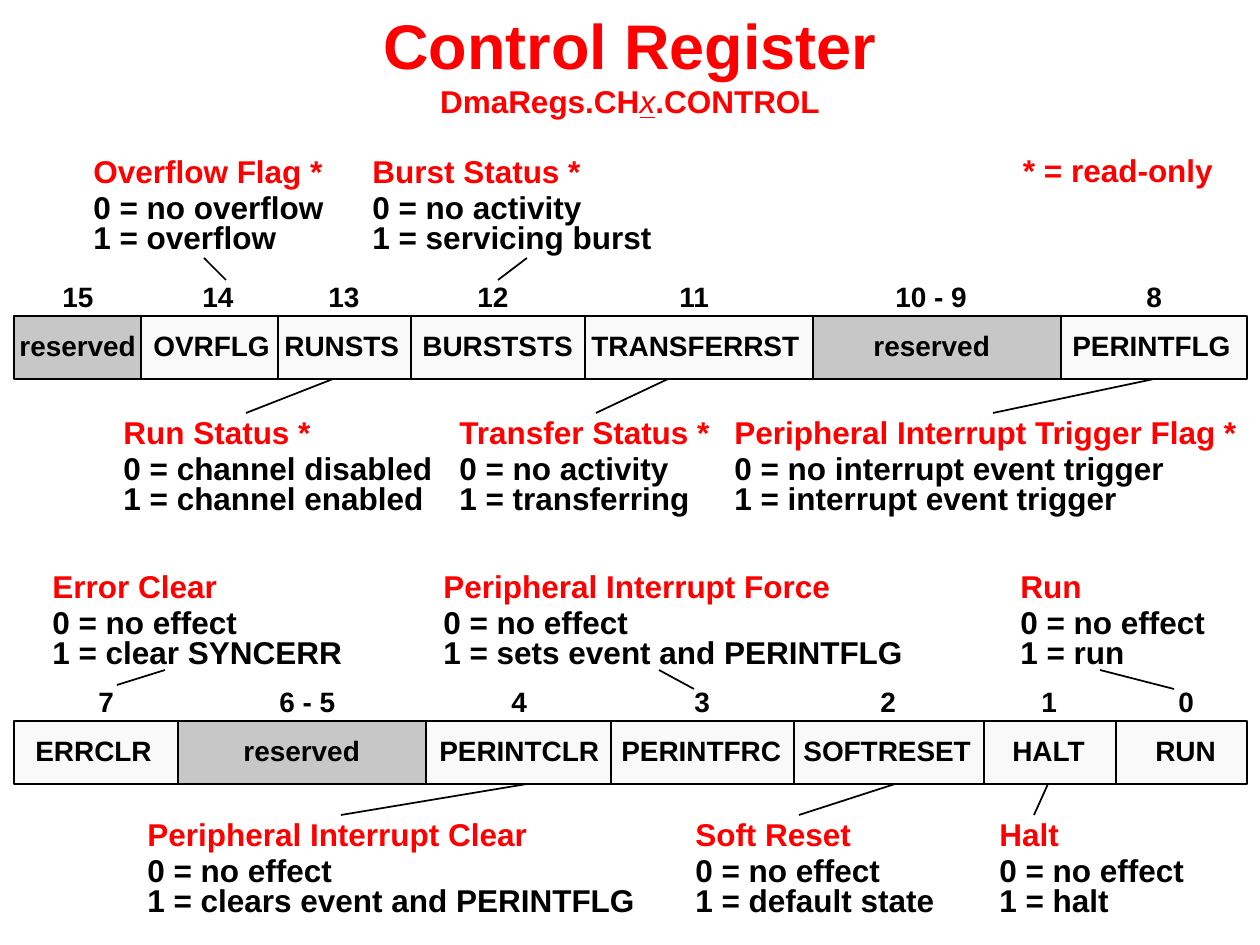
import pptx
import pptx.util
import pptx.dml.color
import pptx.enum.shapes
import pptx.enum.text
import pptx.oxml.ns
from dataclasses import dataclass
from lxml import etree

RGB = pptx.dml.color.RGBColor.from_string
ALIGN = pptx.enum.text.PP_ALIGN
ANCHOR = pptx.enum.text.MSO_ANCHOR
SCALE = 914400 / 126


def px(n):
    return pptx.util.Emu(round(n * SCALE))


@dataclass(frozen=True)
class Theme:
    font: str = "Arial"
    accent: str = "FF0000"
    ink: str = "000000"
    field: str = "F9F9F9"
    reserved: str = "C7C7C7"
    title: int = 36
    note: int = 18
    cell: int = 16
    line: int = 1
    leading: float = 0.8
    gap: float = 3.6


class Deck:
    def __init__(self, theme):
        self.t = theme
        self.prs = pptx.Presentation()
        self.prs.slide_width, self.prs.slide_height = px(1260), px(945)
        self.s = self.prs.slides.add_slide(self.prs.slide_layouts[6])

    def run(self, p, text, size, color, **extra):
        r = p.add_run()
        r.text = text
        fmt = {"name": self.t.font, "size": pptx.util.Pt(size), "bold": True, **extra}
        for key, value in fmt.items():
            setattr(r.font, key, value)
        r.font.color.rgb = RGB(color)

    def frame(self, x, y, w, h, **fmt):
        tf = self.s.shapes.add_textbox(px(x), px(y), px(w), px(h)).text_frame
        for key, value in fmt.items():
            setattr(tf, key, value)
        return tf

    def title(self, heading, parts):
        tf = self.frame(0, 0, 1260, 127, word_wrap=True, vertical_anchor=ANCHOR.MIDDLE)
        p = tf.paragraphs[0]
        p.alignment = ALIGN.CENTER
        self.run(p, heading, self.t.title, self.t.accent)
        p.add_line_break()
        for text, extra in parts:
            self.run(p, text, self.t.note, self.t.accent, **extra)

    def text(self, x, y, w, h, lines, size, align=ALIGN.LEFT, anchor=ANCHOR.TOP):
        tf = self.frame(x, y, w, h, word_wrap=False, vertical_anchor=anchor,
                        auto_size=pptx.enum.text.MSO_AUTO_SIZE.SHAPE_TO_FIT_TEXT)
        for i, (line, color) in enumerate(lines):
            p = tf.add_paragraph() if i else tf.paragraphs[0]
            p.alignment, p.line_spacing = align, self.t.leading
            if len(lines) > 1:
                p.space_after = pptx.util.Pt(0 if i else self.t.gap)
            self.run(p, line, size, color)

    def note(self, x, y, w, heading, *values):
        lines = [(heading, self.t.accent)] + [(v, self.t.ink) for v in values]
        self.text(x, y, w, 111, lines, self.t.note, anchor=ANCHOR.MIDDLE)

    def rect(self, x, y, w, h, fill):
        sp = self.s.shapes.add_shape(pptx.enum.shapes.MSO_SHAPE.RECTANGLE,
                                     px(x), px(y), px(w), px(h))
        sp.shadow.inherit = False
        sp.fill.solid()
        sp.fill.fore_color.rgb = RGB(fill)
        sp.line.color.rgb = RGB(self.t.ink)
        sp.line.width = pptx.util.Pt(self.t.line)
        return sp

    def line(self, x1, y1, x2, y2):
        c = self.s.shapes.add_connector(pptx.enum.shapes.MSO_CONNECTOR.STRAIGHT,
                                        px(x1), px(y1), px(x2), px(y2))
        c.line.color.rgb = RGB(self.t.ink)
        c.line.width = pptx.util.Pt(self.t.line)
        etree.SubElement(c._element.spPr, pptx.oxml.ns.qn("a:effectLst"))
        return c

    def register(self, y, spans, dividers, fields):
        h = 63
        rects = [self.rect(a, y, b - a, h, fill) for a, b, fill in spans]
        for x in dividers:
            self.line(x, y, x, y + h)
        for bit, bit_x, bit_w, name, name_x, name_w in fields:
            self.text(bit_x, y - 36, bit_w, 39, [(bit, self.t.ink)], self.t.cell)
            self.text(name_x, y + 13, name_w, 39, [(name, self.t.ink)], self.t.cell)
        return rects


HIGH_FIELDS = [
    ("15", 50, 59, "reserved", 7, 145),
    ("14", 190, 59, "OVRFLG", 141, 145),
    ("13", 316, 59, "RUNSTS", 272, 144),
    ("12", 465, 59, "BURSTSTS", 410, 180),
    ("11", 667, 59, "TRANSFERRST", 579, 236),
    ("10 - 9", 883, 100, "reserved", 861, 145),
    ("8", 1134, 42, "PERINTFLG", 1060, 188),
]
LOW_FIELDS = [
    ("7", 86, 42, "ERRCLR", 23, 146),
    ("6 - 5", 267, 84, "reserved", 231, 145),
    ("4", 499, 42, "PERINTCLR", 427, 188),
    ("3", 682, 42, "PERINTFRC", 609, 188),
    ("2", 868, 42, "SOFTRESET", 791, 196),
    ("1", 1029, 42, "HALT", 1000, 103),
    ("0", 1166, 42, "RUN", 1143, 89),
]
NOTES = [
    (81, 152, 258, "Overflow Flag *", "0 = no overflow", "1 = overflow"),
    (360, 152, 307, "Burst Status *", "0 = no activity", "1 = servicing burst"),
    (111, 413, 336, "Run Status *", "0 = channel disabled", "1 = channel enabled"),
    (447, 413, 279, "Transfer Status *", "0 = no activity", "1 = transferring"),
    (722, 413, 531, "Peripheral Interrupt Trigger Flag *",
     "0 = no interrupt event trigger", "1 = interrupt event trigger"),
    (40, 567, 317, "Error Clear", "0 = no effect", "1 = clear SYNCERR"),
    (431, 567, 487, "Peripheral Interrupt Force", "0 = no effect",
     "1 = sets event and PERINTFLG"),
    (1008, 567, 212, "Run", "0 = no effect", "1 = run"),
    (135, 815, 515, "Peripheral Interrupt Clear", "0 = no effect",
     "1 = clears event and PERINTFLG"),
    (683, 815, 267, "Soft Reset", "0 = no effect", "1 = default state"),
    (987, 815, 212, "Halt", "0 = no effect", "1 = halt"),
]
POINTERS = [
    (204, 258, 226, 280), (527, 258, 498, 280),
    (246, 413, 333, 379), (596, 413, 668, 379),
    (165, 670, 117, 685), (659, 670, 694, 689), (1100, 670, 1174, 689),
    (527, 784, 341, 815), (895, 784, 799, 815), (1048, 784, 1034, 815),
]


def main():
    t = Theme()
    d = Deck(t)
    d.title("Control Register", [
        ("DmaRegs.CH", {}),
        ("x", {"bold": False, "italic": True, "underline": True}),
        (".CONTROL", {}),
    ])
    high = d.register(316, [(14, 141, t.reserved), (141, 813, t.field),
                            (813, 1061, t.reserved), (1061, 1247, t.field)],
                      [278, 411, 585], HIGH_FIELDS)
    d.register(721, [(426, 1247, t.field), (178, 426, t.reserved), (14, 178, t.field)],
               [611, 794, 984, 1116], LOW_FIELDS)
    for note in NOTES:
        d.note(*note)
    d.text(1010, 152, 216, 43, [("* = read-only", t.accent)], t.note, ALIGN.CENTER)
    for pointer in POINTERS:
        d.line(*pointer)
    d.line(993, 413, 1154, 379).end_connect(high[-1], 2)
    d.prs.save("out.pptx")


if __name__ == "__main__":
    main()
